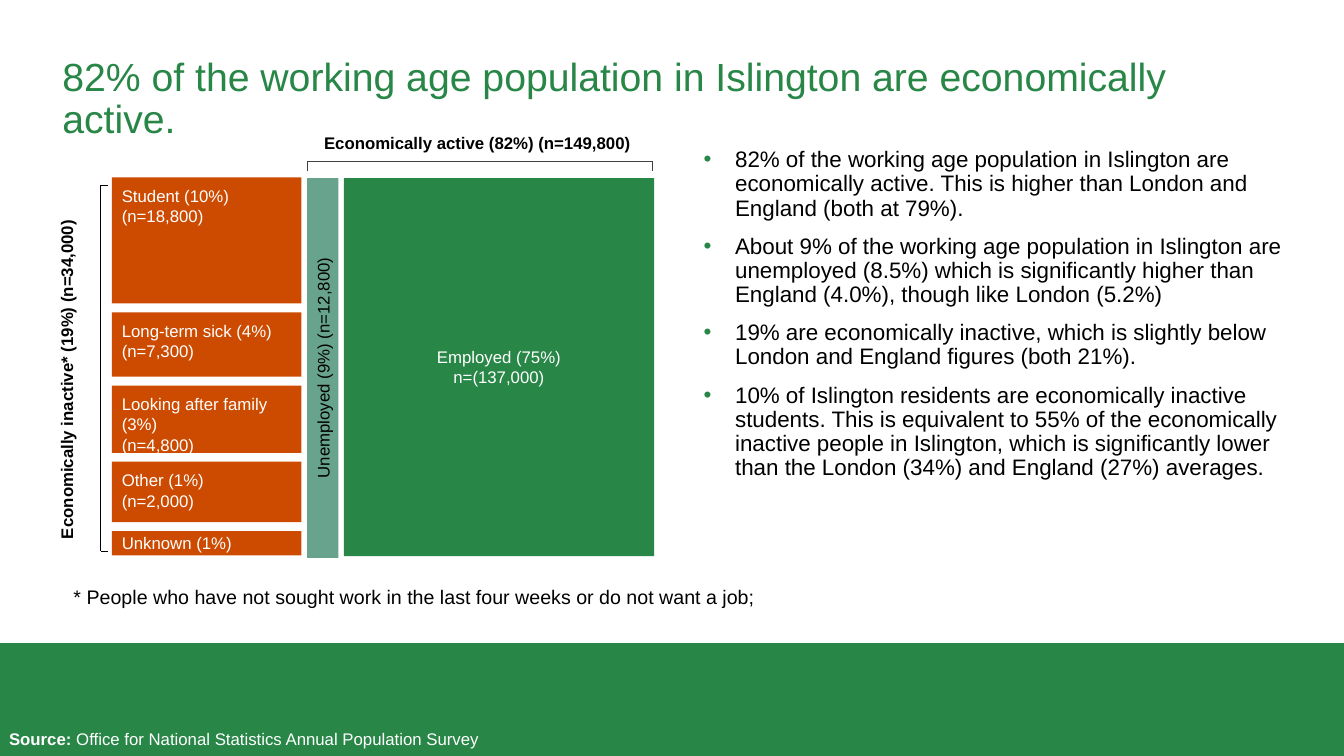
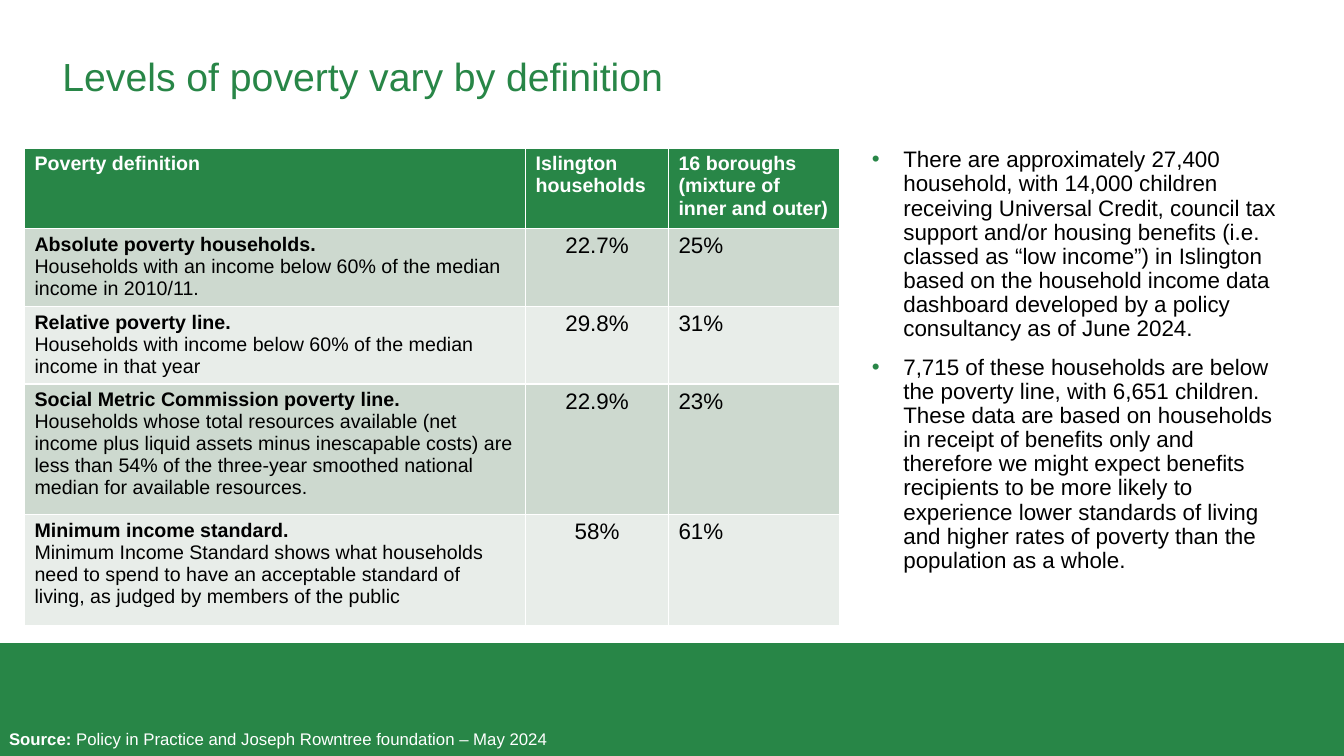
"""Build two Islington slides on economic activity and poverty."""
from dataclasses import dataclass
from itertools import pairwise
from typing import Any, Optional

from lxml.etree import SubElement
from pptx import Presentation
from pptx.dml.color import RGBColor
from pptx.enum.shapes import MSO_CONNECTOR, MSO_SHAPE
from pptx.enum.text import MSO_ANCHOR, MSO_AUTO_SIZE, PP_ALIGN
from pptx.oxml.ns import qn
from pptx.util import Pt

FONT = "Arial"
GREEN, TEAL, ORANGE = "288647", "68A48D", "CC4B00"
WHITE, BLACK, GREY = "FFFFFF", "000000", "404040"
BANDS = ("CDD9CF", "E8EDE9")
WIDTH, HEIGHT = 960, 540
TITLE_ONLY = 5


@dataclass
class Box:
    """Position and size in points."""
    x: float
    y: float
    w: float
    h: float

    def lengths(self) -> tuple:
        """Return the four lengths for python-pptx."""
        return Pt(self.x), Pt(self.y), Pt(self.w), Pt(self.h)


@dataclass
class Run:
    """A piece of text in one format."""
    text: str
    size: float = 12
    color: str = BLACK
    bold: bool = False


@dataclass
class Para:
    """A paragraph of runs."""
    runs: list[Run]
    align: PP_ALIGN = PP_ALIGN.LEFT
    spacing: Optional[float] = None
    before: float = 0
    bullet: bool = False


@dataclass
class Bar:
    """One inactive group in the stacked column."""
    lines: list[str]
    height: float
    anchor: MSO_ANCHOR = MSO_ANCHOR.TOP


@dataclass
class Definition:
    """One row of the poverty table."""
    name: str
    meaning: str
    islington: str
    boroughs: str
    height: float


BARS = [
    Bar(["Student (10%)", "(n=18,800)"], 90),
    Bar(["Long-term sick (4%)", "(n=7,300)"], 46),
    Bar(["Looking after family (3%)", "(n=4,800)"], 48),
    Bar(["Other (1%)", "(n=2,000)"], 43.2),
    Bar(["Unknown (1%)"], 17.3, MSO_ANCHOR.MIDDLE),
]
ACTIVITY_POINTS = [
    "82% of the working age population in Islington are economically active. "
    "This is higher than London and England (both at 79%).",
    "About 9% of the working age population in Islington are unemployed (8.5%) which is "
    "significantly higher than England (4.0%), though like London (5.2%)",
    "19% are economically inactive, which is slightly below London and England figures (both 21%).",
    "10% of Islington residents are economically inactive students. This is equivalent to 55% of "
    "the economically inactive people in Islington, which is significantly lower than the London "
    "(34%) and England (27%) averages.",
]
POVERTY_POINTS = [
    "There are approximately 27,400 household, with 14,000 children receiving Universal Credit, "
    "council tax support and/or housing benefits (i.e. classed as “low income”) in Islington based "
    "on the household income data dashboard developed by a policy consultancy as of June 2024.",
    "7,715 of these households are below the poverty line, with 6,651 children. These data are "
    "based on households in receipt of benefits only and therefore we might expect benefits "
    "recipients to be more likely to experience lower standards of living and higher rates of "
    "poverty than the population as a whole.",
]
HEADERS = ["Poverty definition", "Islington households", "16 boroughs (mixture of inner and outer)"]
HEADER_HEIGHT = 57.5
COLUMNS = [358, 102, 122]
DEFINITIONS = [
    Definition("Absolute poverty households.",
               "Households with an income below 60% of the median income in 2010/11.",
               "22.7%", "25%", 55.5),
    Definition("Relative poverty line.",
               "Households with income below 60% of the median income in that year",
               "29.8%", "31%", 55.5),
    Definition("Social Metric Commission poverty line.",
               "Households whose total resources available (net income plus liquid assets minus "
               "inescapable costs) are less than 54% of the three-year smoothed national median "
               "for available resources.", "22.9%", "23%", 93.5),
    Definition("Minimum income standard.",
               "Minimum Income Standard shows what households need to spend to have an acceptable "
               "standard of living, as judged by members of the public", "58%", "61%", 79.5),
]


def rgb(color: str) -> RGBColor:
    """Turn a hex string into a colour."""
    return RGBColor.from_string(color)


def write(tf: Any, paras: list[Para]) -> None:
    """Fill a text frame run by run."""
    for i, para in enumerate(paras):
        p = tf.add_paragraph() if i else tf.paragraphs[0]
        if para.bullet:
            pPr = p._p.get_or_add_pPr()
            pPr.set("marL", str(Pt(22.5)))
            pPr.set("indent", str(-Pt(22.5)))
            SubElement(SubElement(pPr, qn("a:buClr")), qn("a:srgbClr"), val=GREEN)
            SubElement(pPr, qn("a:buFont"), typeface=FONT)
            SubElement(pPr, qn("a:buChar"), char="•")
        p.alignment = para.align
        p.space_before = Pt(para.before if i else 0)
        if para.spacing:
            p.line_spacing = para.spacing
        for run in para.runs:
            r = p.add_run()
            r.text = run.text
            r.font.name, r.font.size, r.font.bold = FONT, Pt(run.size), run.bold
            r.font.color.rgb = rgb(run.color)


def frame(sp: Any, paras: list[Para], inset: tuple[float, float] = (7.2, 3.6),
          anchor: MSO_ANCHOR = MSO_ANCHOR.TOP, upward: bool = False) -> None:
    """Set up a shape's text frame and fill it."""
    tf = sp.text_frame
    tf.word_wrap, tf.auto_size, tf.vertical_anchor = True, MSO_AUTO_SIZE.NONE, anchor
    tf.margin_left = tf.margin_right = Pt(inset[0])
    tf.margin_top = tf.margin_bottom = Pt(inset[1])
    if upward:
        sp.element.txBody.bodyPr.set("vert", "vert270")
    write(tf, paras)


def add_text(s: Any, box: Box, paras: list[Para], **options: Any) -> None:
    """Add a text box."""
    frame(s.shapes.add_textbox(*box.lengths()), paras, **options)


def add_rect(s: Any, box: Box, color: str) -> Any:
    """Add a plain filled rectangle."""
    sp = s.shapes.add_shape(MSO_SHAPE.RECTANGLE, *box.lengths())
    sp.shadow.inherit = False
    sp.fill.solid()
    sp.fill.fore_color.rgb = rgb(color)
    sp.line.fill.background()
    return sp


def add_bracket(s: Any, points: list[tuple[float, float]], color: str) -> None:
    """Join the points with thin lines."""
    for (x1, y1), (x2, y2) in pairwise(points):
        line = s.shapes.add_connector(MSO_CONNECTOR.STRAIGHT, Pt(x1), Pt(y1), Pt(x2), Pt(y2))
        line.line.color.rgb = rgb(color)
        line.line.width = Pt(0.75)
        SubElement(line.element.spPr, qn("a:effectLst"))


def add_bullets(s: Any, box: Box, points: list[str]) -> None:
    """Add the bulleted commentary."""
    paras = [Para([Run(point, 16)], spacing=0.9, before=10, bullet=True) for point in points]
    add_text(s, box, paras, inset=(0, 0))


def add_slide(prs: Any, title: str, source: str) -> Any:
    """Add a slide with its title, green band and source line."""
    s = prs.slides.add_slide(prs.slide_layouts[TITLE_ONLY])
    sp = s.shapes.title
    sp.left, sp.top, sp.width, sp.height = Box(44.6, 41, 871, 61).lengths()
    frame(sp, [Para([Run(title, 28, GREEN)], spacing=0.9)], inset=(0, 0))
    add_rect(s, Box(0, 459.4, WIDTH, HEIGHT - 459.4), GREEN)
    runs = [Run("Source:", 12, WHITE, True), Run(f" {source}", 12, WHITE)]
    add_text(s, Box(6.5, 520.6, 814, 14.4), [Para(runs)], inset=(0, 0))
    return s


def activity_slide(prs: Any) -> None:
    """Draw the economic activity slide."""
    s = add_slide(prs, "82% of the working age population in Islington are economically active.",
                  "Office for National Statistics Annual Population Survey")
    center, middle = PP_ALIGN.CENTER, MSO_ANCHOR.MIDDLE
    employed = [Para([Run(text, 12, WHITE)], center) for text in ("Employed (75%)", "n=(137,000)")]
    frame(add_rect(s, Box(245.6, 127.2, 221.6, 270), GREEN), employed, anchor=middle)
    unemployed = [Para([Run("Unemployed (9%) (n=12,800)")], center)]
    frame(add_rect(s, Box(219.4, 127.2, 22.3, 271.4), TEAL), unemployed, inset=(0, 0),
          anchor=middle, upward=True)

    top, total = 126.7, 270
    gap = (total - sum(bar.height for bar in BARS)) / (len(BARS) - 1)
    for bar in BARS:
        sp = add_rect(s, Box(79.9, top, 135.4, bar.height), ORANGE)
        paras = [Para([Run(text, 12, WHITE)]) for text in bar.lines]
        frame(sp, paras, inset=(7.2, 0 if bar.anchor == middle else 6), anchor=bar.anchor)
        top += bar.height + gap

    add_bracket(s, [(219.6, 122.4), (219.6, 115.2), (465.8, 115.2), (465.8, 122.4)], GREY)
    add_bracket(s, [(77, 132.5), (72, 132.5), (72, 393.8), (77, 393.8)], BLACK)
    add_text(s, Box(198, 91.6, 286, 22),
             [Para([Run("Economically active (82%) (n=149,800)", bold=True)], center)])
    add_text(s, Box(36.7, 139.7, 31.7, 262.8),
             [Para([Run("Economically inactive* (19%) (n=34,000)", bold=True)], center)],
             upward=True)
    note = "* People who have not sought work in the last four weeks or do not want a job;"
    add_text(s, Box(45.4, 414, 816, 24.5), [Para([Run(note, 14)])])
    add_bullets(s, Box(502.6, 106, 413.3, 327.6), ACTIVITY_POINTS)


def poverty_slide(prs: Any) -> None:
    """Draw the poverty definitions slide."""
    s = add_slide(prs, "Levels of poverty vary by definition",
                  "Policy in Practice and Joseph Rowntree foundation – May 2024")
    heights = [HEADER_HEIGHT] + [row.height for row in DEFINITIONS]
    box = Box(17.5, 105.8, sum(COLUMNS), sum(heights))
    table = s.shapes.add_table(len(heights), len(COLUMNS), *box.lengths()).table
    for column, width in zip(table.columns, COLUMNS):
        column.width = Pt(width)
    rows = [[[Para([Run(text, 14, WHITE, True)])] for text in HEADERS]]
    for row in DEFINITIONS:
        rows.append([
            [Para([Run(row.name, 14, bold=True)]), Para([Run(row.meaning, 14)])],
            [Para([Run(row.islington, 16)], PP_ALIGN.CENTER)],
            [Para([Run(row.boroughs, 16)])],
        ])
    for i, (row, height) in enumerate(zip(rows, heights)):
        table.rows[i].height = Pt(height)
        for j, paras in enumerate(row):
            cell = table.cell(i, j)
            cell.fill.solid()
            cell.fill.fore_color.rgb = rgb(BANDS[(i - 1) % 2] if i else GREEN)
            write(cell.text_frame, paras)
    add_bullets(s, Box(622.8, 106, 292.3, 327.6), POVERTY_POINTS)


def main() -> None:
    """Build and save the presentation."""
    prs = Presentation()
    prs.slide_width, prs.slide_height = Pt(WIDTH), Pt(HEIGHT)
    activity_slide(prs)
    poverty_slide(prs)
    prs.save("out.pptx")


if __name__ == "__main__":
    main()
